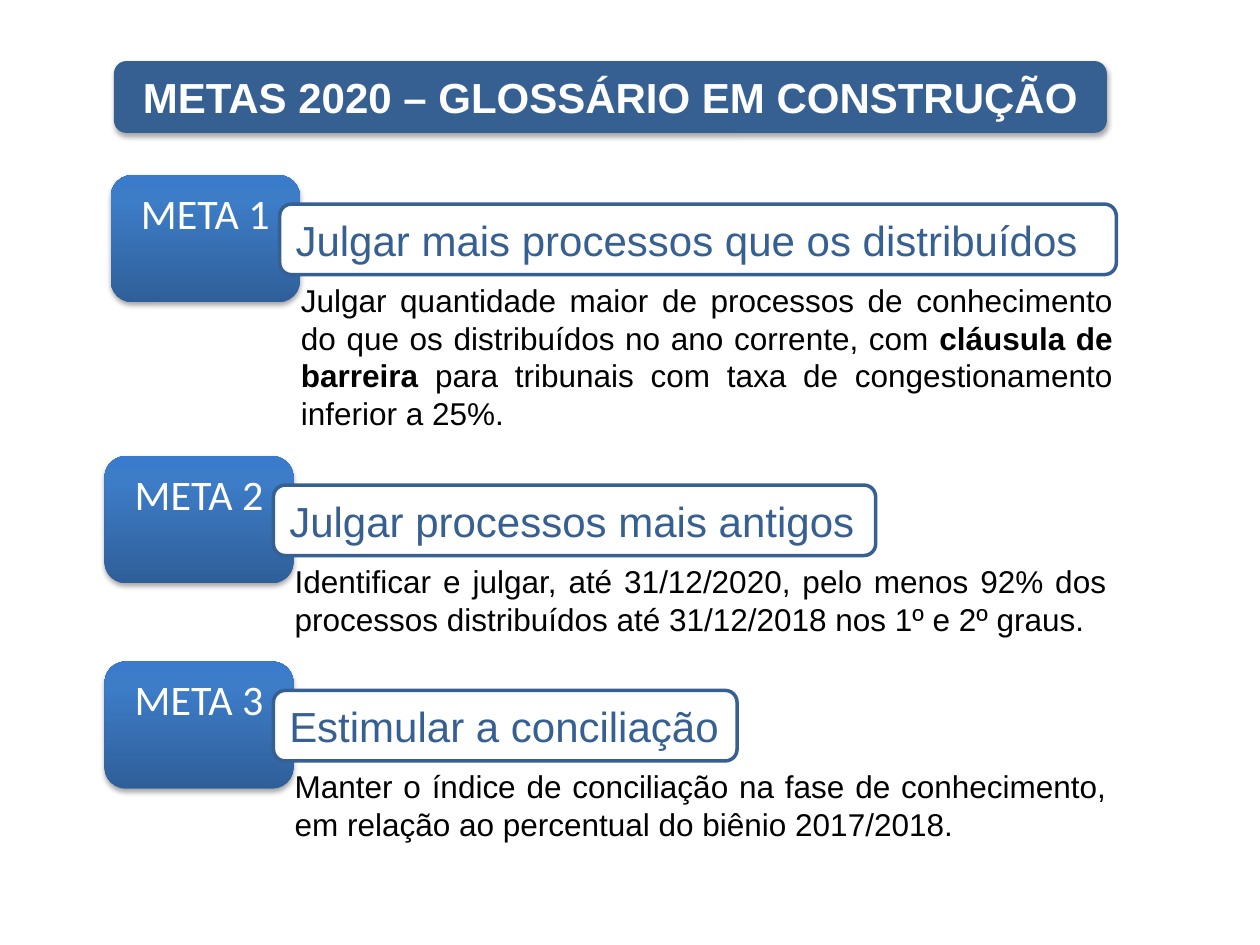
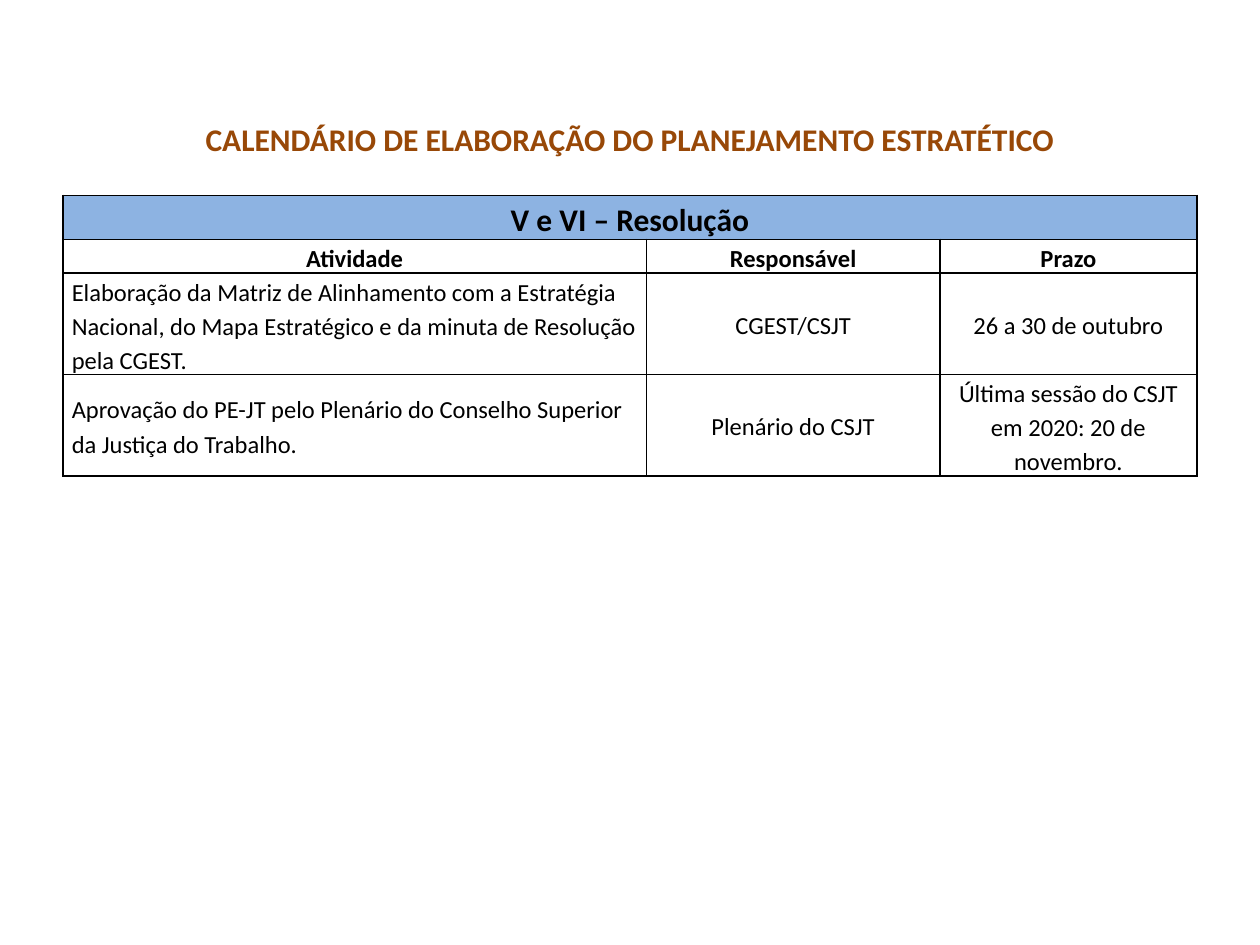
from copy import deepcopy
from lxml.etree import SubElement
from pptx import Presentation
from pptx.dml.color import RGBColor
from pptx.enum.shapes import MSO_SHAPE
from pptx.enum.text import MSO_ANCHOR, MSO_AUTO_SIZE, PP_ALIGN
from pptx.oxml.ns import qn
from pptx.util import Inches, Pt

COLORS = {
    "navy": "376092",
    "white": "FFFFFF",
    "black": "000000",
    "brown": "984807",
    "band": "8DB3E2",
}
BADGE_STOPS = [(0, "2F5F99"), (0.8, "3D7CC7"), (1, "3A7CCB")]
SLIDE_W, SLIDE_H = Inches(10), Inches(7.5)
COLS, ROWS = 100, 75
HEADING_ROWS = 5.6

GOALS = [
    ((8.8, 13.9), "META 1", "Julgar mais processos que os distribuídos", 66.4, 13.1,
     [("Julgar quantidade maior de processos de conhecimento do que os "
       "distribuídos no ano corrente, com ", False),
      ("cláusula de barreira", True),
      (" para tribunais com taxa de congestionamento inferior a 25%.", False)]),
    ((8.3, 36.2), "META 2", "Julgar processos mais antigos", 47.8, 7.1,
     [("Identificar e julgar, até 31/12/2020, pelo menos 92% dos processos "
       "distribuídos até 31/12/2018 nos 1º e 2º graus. ", False)]),
    ((8.3, 52.5), "META 3", "Estimular a conciliação", 36.8, 7.1,
     [("Manter o índice de conciliação na fase de conhecimento, em relação "
       "ao percentual do biênio 2017/2018.", False)]),
]

CALENDAR = [
    ["V e VI – Resolução", "", ""],
    ["Atividade", "Responsável", "Prazo"],
    ["Elaboração da Matriz de Alinhamento com a Estratégia Nacional, do Mapa "
     "Estratégico e da minuta de Resolução pela CGEST.",
     "CGEST/CSJT", "26 a 30 de outubro"],
    ["Aprovação do PE-JT pelo Plenário do Conselho Superior da Justiça do Trabalho.",
     "Plenário do CSJT", "Última sessão do CSJT em 2020: 20 de novembro."],
]
CALENDAR_COLS = [46.3, 23.3, 20.4]
CALENDAR_ROWS = [3.5, 2.6, 6.7, 6.7]


def rgb(name):
    return RGBColor.from_string(COLORS[name])


def col(n):
    return int(SLIDE_W * n / COLS)


def row(n):
    return int(SLIDE_H * n / ROWS)


def grid(x, y, w, h):
    return col(x), row(y), col(w), row(h)


def write(tf, text, size=18, font="Arial", color="black", bold=False,
          align=PP_ALIGN.LEFT, spacing=None):
    p = tf.paragraphs[0]
    p.alignment = align
    p.line_spacing = spacing
    runs = [(text, bold)] if isinstance(text, str) else text
    for part, strong in runs:
        r = p.add_run()
        r.text = part
        r.font.name, r.font.size, r.font.bold = font, Pt(size), strong
        r.font.color.rgb = rgb(color)


def set_frame(tf, wrap=True, anchor=MSO_ANCHOR.TOP):
    tf.word_wrap = wrap
    tf.auto_size = MSO_AUTO_SIZE.SHAPE_TO_FIT_TEXT
    tf.vertical_anchor = anchor


def add_text(slide, box, text, wrap=True, **fmt):
    tf = slide.shapes.add_textbox(*grid(*box)).text_frame
    set_frame(tf, wrap)
    write(tf, text, **fmt)


def add_rounded(slide, box, text, fill=None, line=None, weight=0.75, shadow=False,
                wrap=True, anchor=MSO_ANCHOR.MIDDLE, **fmt):
    s = slide.shapes.add_shape(MSO_SHAPE.ROUNDED_RECTANGLE, *grid(*box))
    if fill:
        s.fill.solid()
        s.fill.fore_color.rgb = rgb(fill)
    else:
        fill_badge(s)
    if line:
        s.line.color.rgb = rgb(line)
        s.line.width = Pt(weight)
    else:
        s.line.fill.background()
    s.shadow.inherit = False
    if shadow:
        drop_shadow(s)
    set_frame(s.text_frame, wrap, anchor)
    write(s.text_frame, text, **fmt)


def fill_badge(s):
    s.fill.gradient()
    s.fill.gradient_angle = 90
    stops = s._element.spPr.find(".//" + qn("a:gsLst"))
    stops.append(deepcopy(stops[0]))
    for stop, (position, color) in zip(s.fill.gradient_stops, BADGE_STOPS):
        stop.position = position
        stop.color.rgb = RGBColor.from_string(color)


def drop_shadow(s):
    effects = s._element.spPr.find(qn("a:effectLst"))
    shadow = SubElement(effects, qn("a:outerShdw"), blurRad=str(Pt(3.1)),
                        dist=str(Pt(1.8)), dir="5400000", rotWithShape="0")
    color = SubElement(shadow, qn("a:srgbClr"), val=COLORS["black"])
    SubElement(color, qn("a:alpha"), val="35000")


def add_goal(slide, origin, badge, heading, heading_w, text_h, text):
    x, y = origin
    add_rounded(slide, (x, y, 15, 10.1), badge, shadow=True, anchor=MSO_ANCHOR.TOP,
                size=24, font="Calibri", color="white", align=PP_ALIGN.CENTER)
    add_rounded(slide, (x + 13.4, y + 2.3, heading_w, HEADING_ROWS), heading,
                fill="white", line="navy", weight=2, wrap=False, size=24, color="navy")
    add_text(slide, (x + 14.1, y + 2.3 + HEADING_ROWS, 66.4, text_h), text,
             align=PP_ALIGN.JUSTIFY)


def border_cell(cell):
    tc_pr = cell._tc.get_or_add_tcPr()
    for i, side in enumerate(("lnL", "lnR", "lnT", "lnB")):
        ln = SubElement(tc_pr, qn("a:" + side), w=str(Pt(1)))
        fill = SubElement(ln, qn("a:solidFill"))
        SubElement(fill, qn("a:srgbClr"), val=COLORS["black"])
        tc_pr.insert(i, ln)


def add_calendar(slide, box):
    table = slide.shapes.add_table(len(CALENDAR), len(CALENDAR_COLS), *grid(*box)).table
    for c, width in zip(table.columns, CALENDAR_COLS):
        c.width = col(width)
    for r, height in zip(table.rows, CALENDAR_ROWS):
        r.height = row(height)
    table.cell(0, 0).merge(table.cell(0, len(CALENDAR_COLS) - 1))
    for i, texts in enumerate(CALENDAR):
        for j, text in enumerate(texts):
            cell = table.cell(i, j)
            cell.margin_left = cell.margin_right = Inches(0.07)
            cell.margin_top = cell.margin_bottom = 0
            cell.vertical_anchor = MSO_ANCHOR.MIDDLE
            cell.fill.solid()
            cell.fill.fore_color.rgb = rgb("white" if i else "band")
            border_cell(cell)
            if text:
                left = i > 1 and j == 0
                write(cell.text_frame, text, size=14 if i else 18, font="Calibri",
                      bold=i < 2, spacing=1.15,
                      align=PP_ALIGN.LEFT if left else PP_ALIGN.CENTER)


def goals_slide(slide):
    add_rounded(slide, (9.1, 4.9, 78.7, HEADING_ROWS),
                "METAS 2020 – GLOSSÁRIO EM CONSTRUÇÃO", fill="navy", line="navy",
                shadow=True, size=24, color="white", bold=True, align=PP_ALIGN.CENTER)
    for goal in GOALS:
        add_goal(slide, *goal)


def calendar_slide(slide):
    add_text(slide, (15, 9, 70, 4),
             "CALENDÁRIO DE ELABORAÇÃO DO PLANEJAMENTO ESTRATÉTICO", wrap=False,
             font="Calibri", color="brown", bold=True, align=PP_ALIGN.CENTER)
    add_calendar(slide, (5, 15.5, sum(CALENDAR_COLS), sum(CALENDAR_ROWS)))


def main():
    prs = Presentation()
    prs.slide_width, prs.slide_height = SLIDE_W, SLIDE_H
    for build in (goals_slide, calendar_slide):
        build(prs.slides.add_slide(prs.slide_layouts[6]))
    prs.save("out.pptx")


if __name__ == "__main__":
    main()
